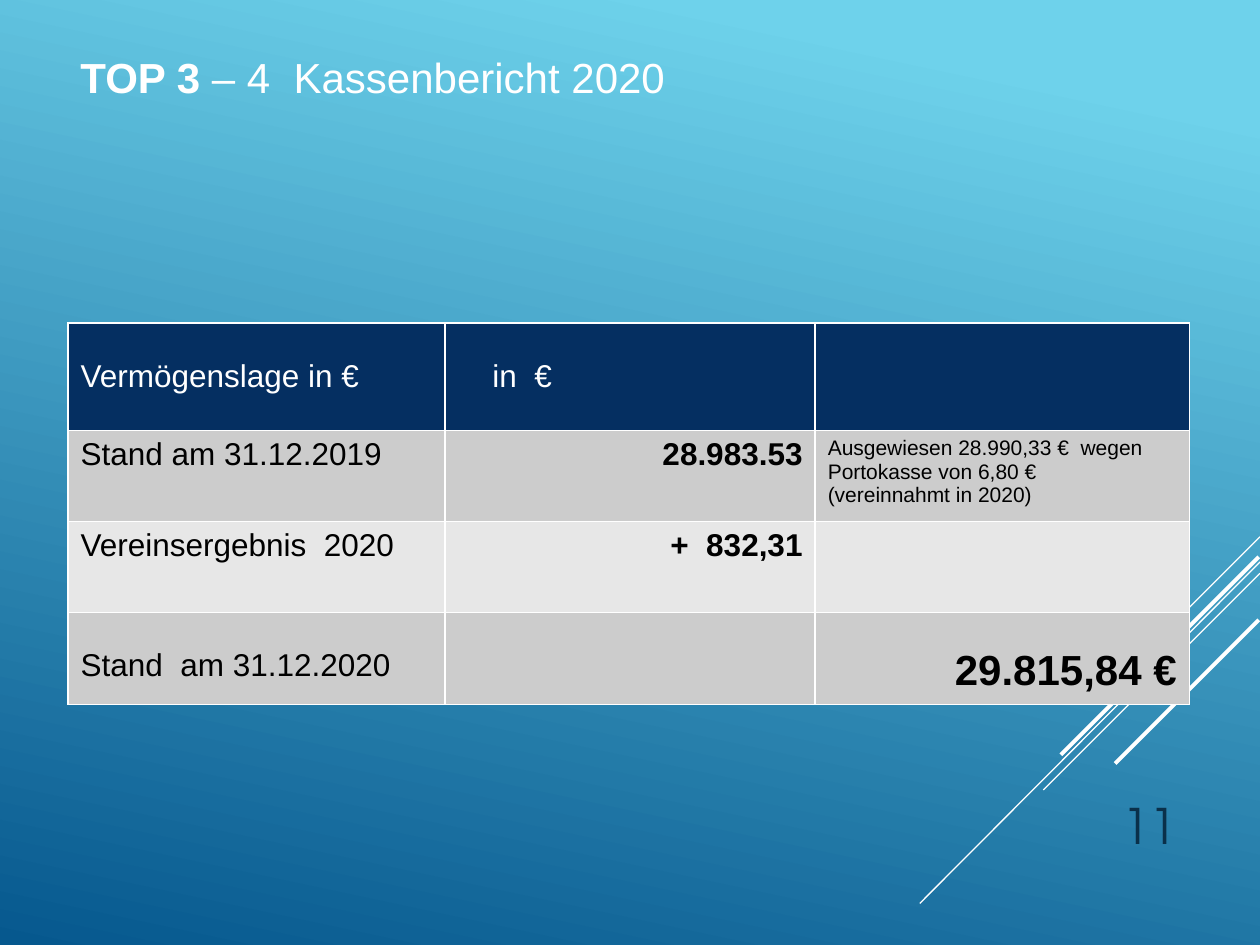
from lxml import etree
from pptx import Presentation
from pptx.dml.color import RGBColor
from pptx.enum.shapes import MSO_CONNECTOR
from pptx.enum.text import MSO_ANCHOR, PP_ALIGN
from pptx.oxml.ns import qn
from pptx.util import Pt

LINE = MSO_CONNECTOR.STRAIGHT
TOP, BOTTOM = MSO_ANCHOR.TOP, MSO_ANCHOR.BOTTOM
LEFT, RIGHT = PP_ALIGN.LEFT, PP_ALIGN.RIGHT
HEX = {
    "sky": "6ED2EB", "sea": "06588E", "white": "FFFFFF", "black": "000000",
    "navy": "052F61", "gray": "CCCCCC", "pale": "E7E7E7", "ink": "0A304A",
}
WIDTHS = [215.28, 211.68, 213.84]
HEIGHTS = [61.2, 52, 52, 52]
FILLS = ["navy", "gray", "pale", "gray"]
DROP = 20.2
CELLS = [
    (0, 0, ["Vermögenslage in €"], {"color": "white", "top": DROP}),
    (0, 1, ["in  €"], {"color": "white", "top": DROP, "left": 27.2}),
    (1, 0, ["Stand am 31.12.2019"], {}),
    (1, 1, ["28.983.53"], {"bold": True, "align": RIGHT}),
    (1, 2, ["Ausgewiesen 28.990,33 €  wegen Portokasse von 6,80 €",
            "(vereinnahmt in 2020)"], {"size": 12}),
    (2, 0, ["Vereinsergebnis  2020"], {}),
    (2, 1, ["+  832,31"], {"bold": True, "align": RIGHT}),
    (3, 0, ["Stand  am 31.12.2020"], {"top": DROP}),
    (3, 2, ["29.815,84 €"],
     {"size": 24, "bold": True, "align": RIGHT, "top": DROP}),
]
RAYS = [
    (720, 306.72, 660.24, 366.48, 0.75),
    (720, 321.12, 525.6, 516.24, 0.75),
    (720, 327.6, 596.16, 451.44, 0.75),
    (719.28, 318.24, 606.24, 431.28, 2.25),
    (719.28, 354.24, 637.2, 436.32, 2.25),
]


def tint(name):
    return RGBColor.from_string(HEX[name])


class Deck:
    def __init__(self, wide, high, face="Arial"):
        self.face = face
        self.file = Presentation()
        self.file.slide_width, self.file.slide_height = Pt(wide), Pt(high)
        self.slide = self.file.slides.add_slide(self.file.slide_layouts[6])

    def ground(self, stops, angle):
        fill = self.slide.background.fill
        fill.gradient()
        fill.gradient_angle = angle
        for stop, (name, place) in zip(fill.gradient_stops, stops):
            stop.color.rgb = tint(name)
            stop.position = place

    def line(self, x1, y1, x2, y2, width):
        line = self.slide.shapes.add_connector(
            LINE, Pt(x1), Pt(y1), Pt(x2), Pt(y2))
        line.line.color.rgb = tint("white")
        line.line.width = Pt(width)
        etree.SubElement(line._element.spPr, qn("a:effectLst"))

    def style(self, para, size, color, align=LEFT, bold=False, face=None):
        para.alignment = align
        font = para.font
        font.name, font.size = face or self.face, Pt(size)
        font.bold, font.color.rgb = bold, tint(color)

    def text(self, box, runs, size, color, wrap=True, anchor=TOP, **look):
        frame = self.slide.shapes.add_textbox(*map(Pt, box)).text_frame
        frame.word_wrap = wrap
        frame.vertical_anchor = anchor
        para = frame.paragraphs[0]
        self.style(para, size, color, **look)
        for words, bold in runs:
            run = para.add_run()
            run.text = words
            run.font.bold = bold

    def edge(self, cell):
        props = cell._tc.get_or_add_tcPr()
        for side in "LRTB":
            line = etree.SubElement(
                props, qn(f"a:ln{side}"), w=str(Pt(1)))
            fill = etree.SubElement(line, qn("a:solidFill"))
            etree.SubElement(fill, qn("a:srgbClr"), val=HEX["white"])

    def table(self, x, y, widths, heights, fills):
        table = self.slide.shapes.add_table(
            len(heights), len(widths), Pt(x), Pt(y),
            Pt(sum(widths)), Pt(sum(heights))).table
        table.first_row = table.horz_banding = False
        for col, width in zip(table.columns, widths):
            col.width = Pt(width)
        for row, high, name in zip(table.rows, heights, fills):
            row.height = Pt(high)
            for cell in row.cells:
                self.edge(cell)
                cell.fill.solid()
                cell.fill.fore_color.rgb = tint(name)
        return table

    def cell(self, cell, lines, size=18, color="black", top=3.6, left=7.2,
             **look):
        cell.margin_top, cell.margin_left = Pt(top), Pt(left)
        cell.text = "\n".join(lines)
        for para in cell.text_frame.paragraphs:
            self.style(para, size, color, **look)


def main():
    deck = Deck(720, 540)
    deck.ground([("sky", 0.1), ("sea", 1)], 258)
    for ray in RAYS:
        deck.line(*ray)
    deck.text((612, 439.2, 67.68, 52.56), [("11", False)], 28, "ink",
              anchor=BOTTOM, align=RIGHT, face="TeX Gyre Adventor")
    table = deck.table(38.88, 184.7, WIDTHS, HEIGHTS, FILLS)
    for row, col, lines, look in CELLS:
        deck.cell(table.cell(row, col), lines, **look)
    deck.text((38.88, 25.92, 352.08, 36),
              [("TOP 3", True), (" – 4  Kassenbericht 2020", False)],
              24, "white", wrap=False)
    deck.file.save("out.pptx")


if __name__ == "__main__":
    main()
